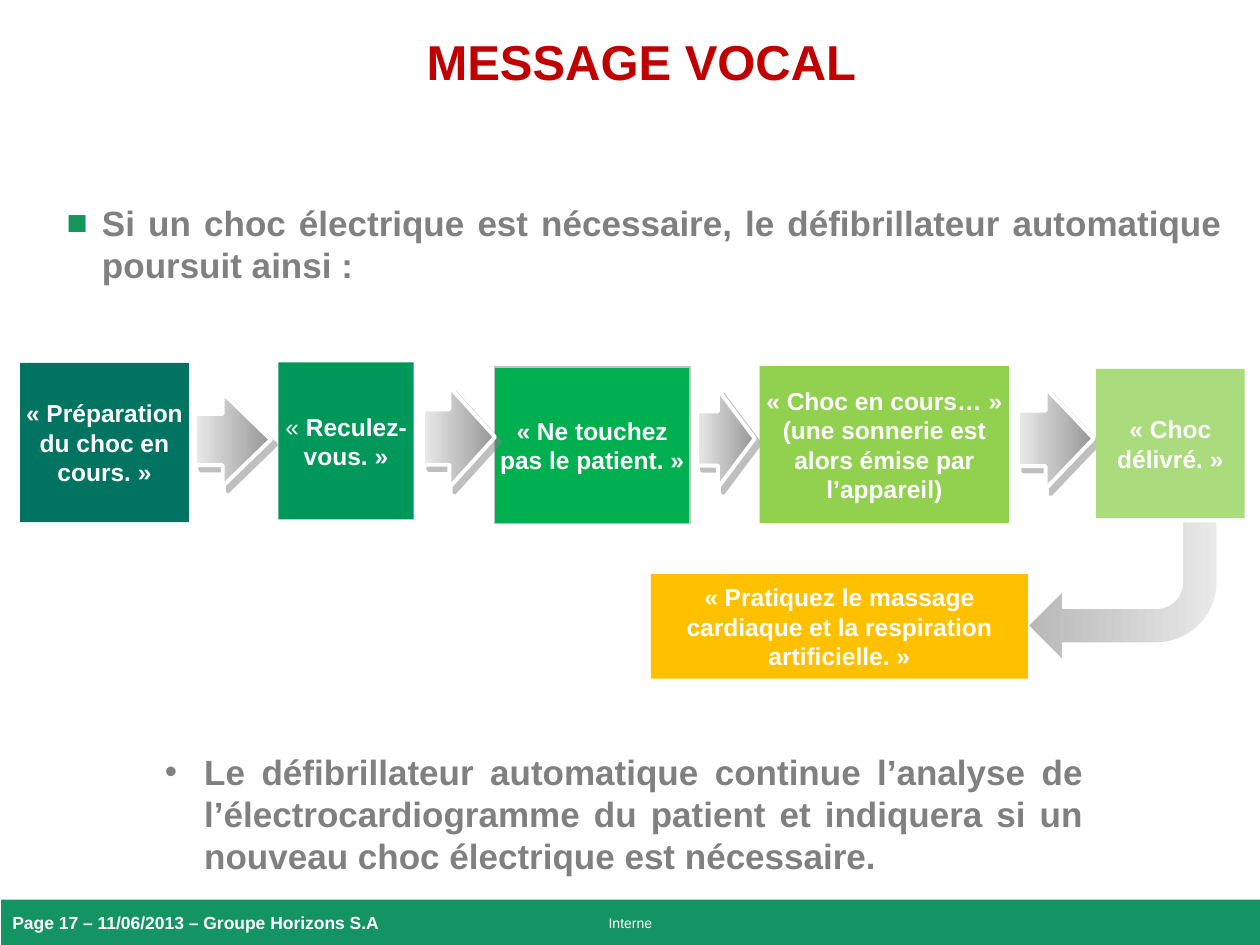
"""Build the slide on the voice messages of an automatic defibrillator."""
from lxml.etree import SubElement
from pptx import Presentation
from pptx.dml.color import RGBColor
from pptx.enum.shapes import MSO_SHAPE
from pptx.enum.text import MSO_ANCHOR, PP_ALIGN
from pptx.oxml.ns import qn
from pptx.util import Pt

TITLE = "MESSAGE VOCAL"
INTRO = "Si un choc électrique est nécessaire, le défibrillateur automatique poursuit ainsi :"
CONCLUSION = (
    "Le défibrillateur automatique continue l’analyse de l’électrocardiogramme "
    "du patient et indiquera si un nouveau choc électrique est nécessaire."
)
FOOTER = "Page 17 – 11/06/2013 – Groupe Horizons S.A"
CLASSIFICATION = "Interne"

STEPS = [
    ("box", (11.5, 207.4, 96.5, 91), "007460", [[("« Préparation du choc en cours. »", True)]]),
    ("box", (159.1, 207.1, 77.3, 89.8), "00975A", [[("« ", False), ("Reculez-vous. »", True)]]),
    ("box", (282.6, 209.5, 111.6, 89.6), "00B050", [[("« Ne touchez pas le patient. »", True)]]),
    ("arrow", (111.6, 224.6, 43.2, 53.3)),
    ("arrow", (241.9, 221, 41, 57.6)),
    ("arrow", (398.2, 222.5, 33.1, 56.2)),
    ("box", (434.1, 209.2, 142.6, 89.8), "92D050",
     [[("« Choc en cours… »", True)], [("(une sonnerie est alors émise par l’appareil)", True)]]),
    ("arrow", (581.8, 221.8, 43.2, 57.6)),
    ("box", (626.3, 210.8, 85, 85.3), "AADB7D", [[("« Choc délivré. »", True)]]),
    ("return", (587.5, 298.1, 108, 79.2)),
    ("box", (372, 328, 215.4, 59.8), "FFC000",
     [[("« Pratiquez le massage cardiaque et la respiration artificielle. »", True)]]),
]
OUTLINED = "00B050"


def rgb(value):
    """Turn a hex string into a colour."""
    return RGBColor.from_string(value)


def add_part(shapes, preset, place):
    """Add a preset shape without shadow or line."""
    part = shapes.add_shape(preset, *map(Pt, place))
    part.shadow.inherit = False
    part.line.fill.background()
    return part


def write(part, paragraphs, size, color, align, inset=True, anchor=MSO_ANCHOR.TOP):
    """Write paragraphs of (text, bold) runs and return the first paragraph."""
    frame = part.text_frame
    frame.word_wrap = True
    frame.vertical_anchor = anchor
    if not inset:
        frame.margin_left = frame.margin_top = frame.margin_right = frame.margin_bottom = 0
    for index, runs in enumerate(paragraphs):
        paragraph = frame.add_paragraph() if index else frame.paragraphs[0]
        paragraph.alignment = align
        for text, bold in runs:
            run = paragraph.add_run()
            run.text = text
            run.font.name = "Arial"
            run.font.size = Pt(size)
            run.font.bold = bold
            run.font.color.rgb = rgb(color)
    return frame.paragraphs[0]


def add_text(shapes, place, text, size, color, align, bold=True, **layout):
    """Add a text box holding one paragraph."""
    box = shapes.add_textbox(*map(Pt, place))
    return write(box, [[(text, bold)]], size, color, align, **layout)


def add_bullet(paragraph, mark, color, indent):
    """Give a paragraph a hanging bullet."""
    properties = paragraph._p.get_or_add_pPr()
    properties.set("marL", str(Pt(indent)))
    properties.set("indent", str(-Pt(indent)))
    SubElement(SubElement(properties, qn("a:buClr")), qn("a:srgbClr"), val=color)
    SubElement(properties, qn("a:buFont"), typeface="Arial")
    SubElement(properties, qn("a:buChar"), char=mark)


def fill_gradient(part, start, end, angle, line_width):
    """Fill with a two-colour gradient inside a white line."""
    part.fill.gradient()
    part.fill.gradient_angle = angle
    for stop, color in zip(part.fill.gradient_stops, (start, end)):
        stop.color.rgb = rgb(color)
    part.line.color.rgb = rgb("FFFFFF")
    part.line.width = Pt(line_width)


def add_box(shapes, place, color, paragraphs):
    """Add a spoken message."""
    box = add_part(shapes, MSO_SHAPE.RECTANGLE, place)
    box.fill.solid()
    box.fill.fore_color.rgb = rgb(color)
    if color == OUTLINED:
        box.line.color.rgb = rgb("C0C0C0")
        box.line.width = Pt(1)
    write(box, paragraphs, 14, "FFFFFF", PP_ALIGN.CENTER, inset=False, anchor=MSO_ANCHOR.MIDDLE)


def add_arrow(shapes, place):
    """Add an arrow with a hard shadow between two messages."""
    arrow = add_part(shapes, MSO_SHAPE.RIGHT_ARROW, place)
    arrow.adjustments[0], arrow.adjustments[1] = 0.55, 0.636
    fill_gradient(arrow, "EAEAEA", "969696", 0, 2.25)
    properties = arrow._element.spPr
    properties.find(qn("a:xfrm")).set("flipV", "1")
    shadow = SubElement(properties.find(qn("a:effectLst")), qn("a:outerShdw"),
                        dist=str(Pt(4.2)), dir="2700000", algn="ctr", rotWithShape="0")
    tone = SubElement(shadow, qn("a:srgbClr"), val="808080")
    SubElement(tone, qn("a:alpha"), val="50000")


def add_return(shapes, place):
    """Add the bent arrow leading down to the last message."""
    arrow = add_part(shapes, MSO_SHAPE.BENT_ARROW, place)
    arrow.rotation = 180
    fill_gradient(arrow, "B8B8B8", "E9E9E9", 180, 0.75)


def main():
    """Build and save the slide."""
    deck = Presentation()
    deck.slide_width, deck.slide_height = Pt(720), Pt(540)
    shapes = deck.slides.add_slide(deck.slide_layouts[6]).shapes

    band = add_part(shapes, MSO_SHAPE.RECTANGLE, (0.7, 514, 719.3, 26))
    band.fill.solid()
    band.fill.fore_color.rgb = rgb("149363")
    add_text(shapes, (0, 516.2, 720, 22.3), FOOTER, 10, "FFFFFF", PP_ALIGN.LEFT,
             anchor=MSO_ANCHOR.MIDDLE)
    title = add_text(shapes, (42.5, 25.9, 648, 90), TITLE, 28, "C00000", PP_ALIGN.CENTER,
                     inset=False)
    title.line_spacing = 0.75
    intro = add_text(shapes, (31, 111.6, 674.6, 249.8), INTRO, 20, "808080", PP_ALIGN.JUSTIFY)
    add_bullet(intro, "■", "15945C", 20.2)
    add_text(shapes, (246.2, 516.2, 228.2, 22.3), CLASSIFICATION, 8, "FFFFFF", PP_ALIGN.CENTER,
             bold=False, inset=False, anchor=MSO_ANCHOR.MIDDLE)
    conclusion = add_text(shapes, (87.1, 425.5, 539.3, 79.9), CONCLUSION, 20, "808080",
                          PP_ALIGN.JUSTIFY)
    add_bullet(conclusion, "•", "808080", 22.5)

    builders = {"box": add_box, "arrow": add_arrow, "return": add_return}
    for kind, *details in STEPS:
        builders[kind](shapes, *details)

    deck.save("out.pptx")


if __name__ == "__main__":
    main()
